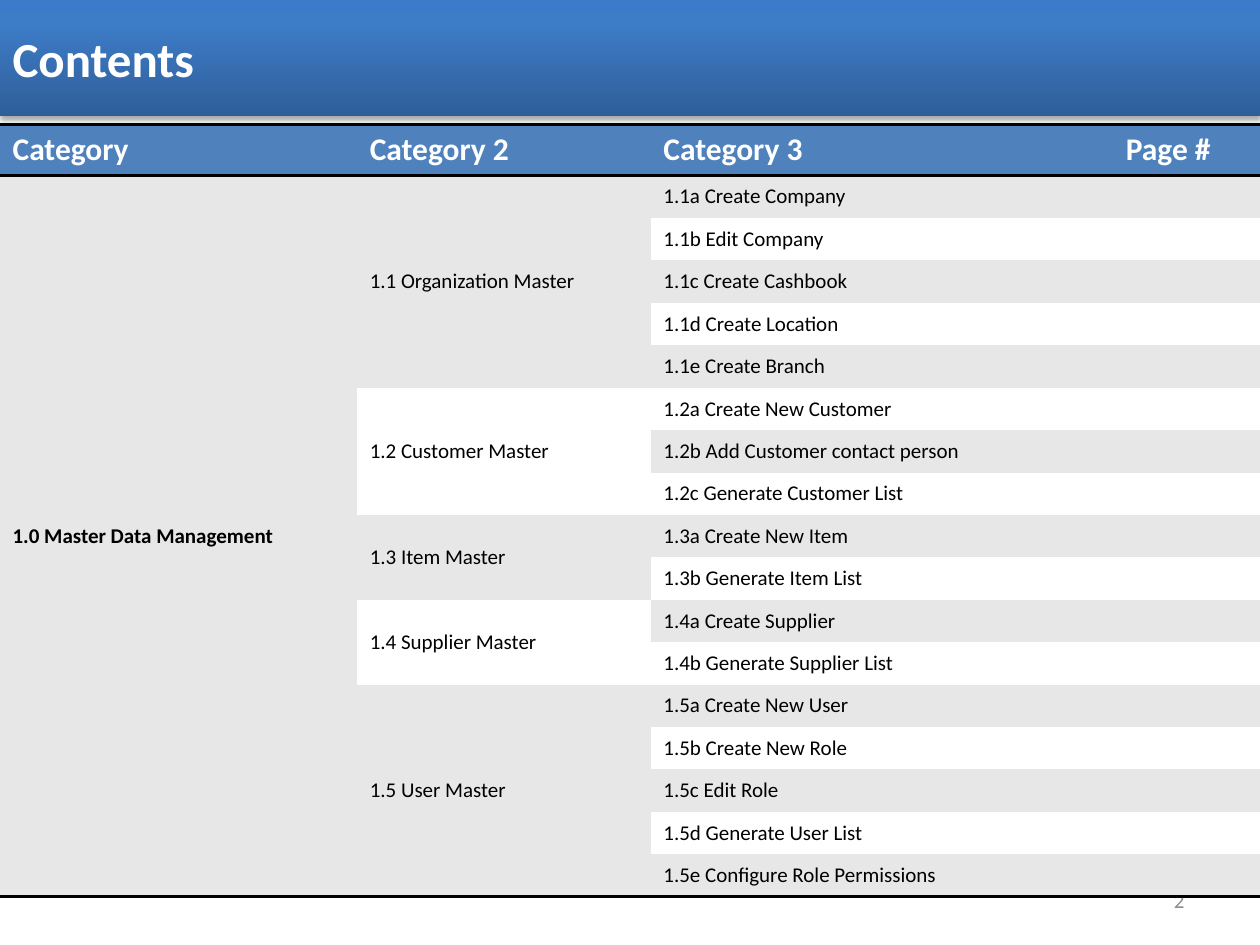
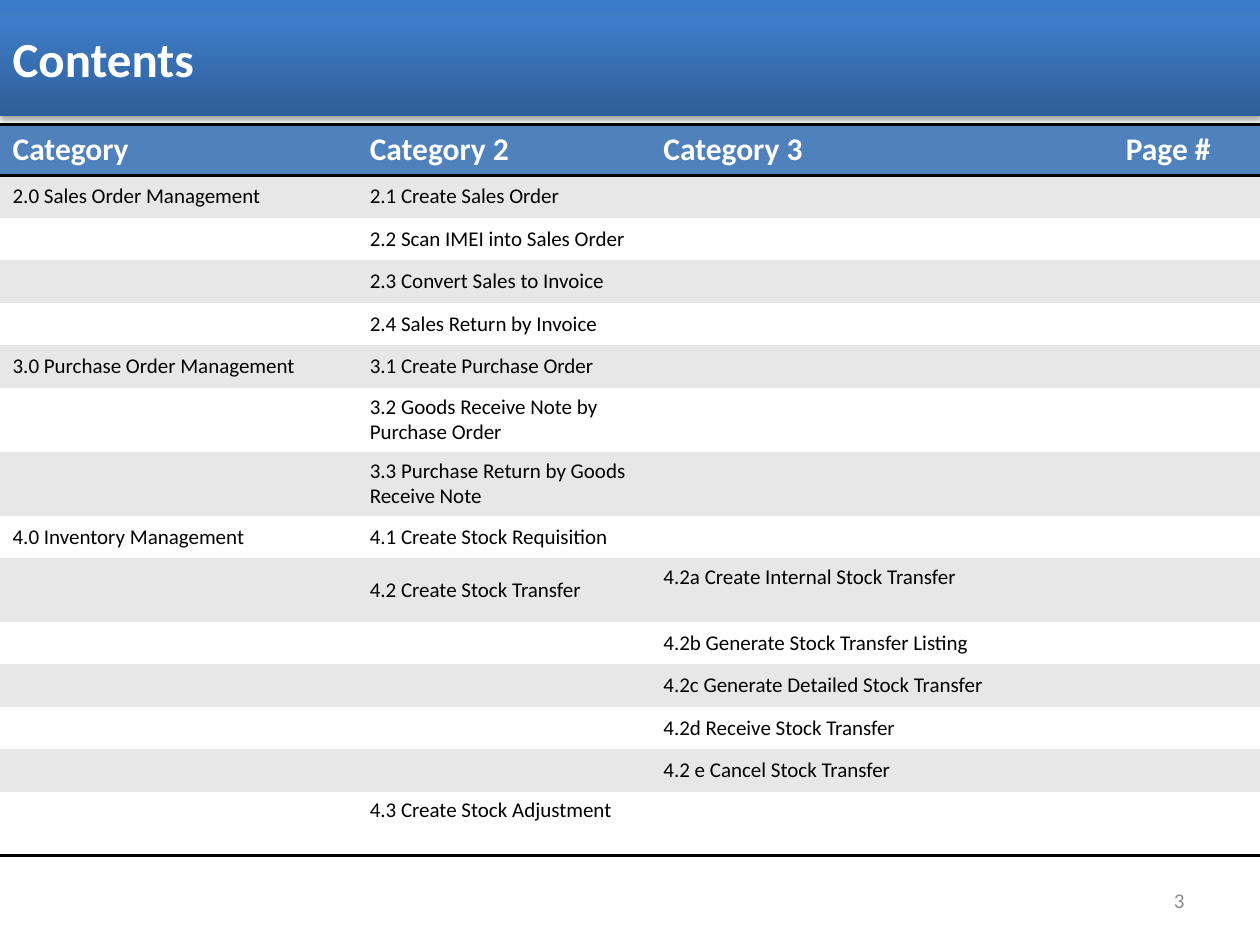
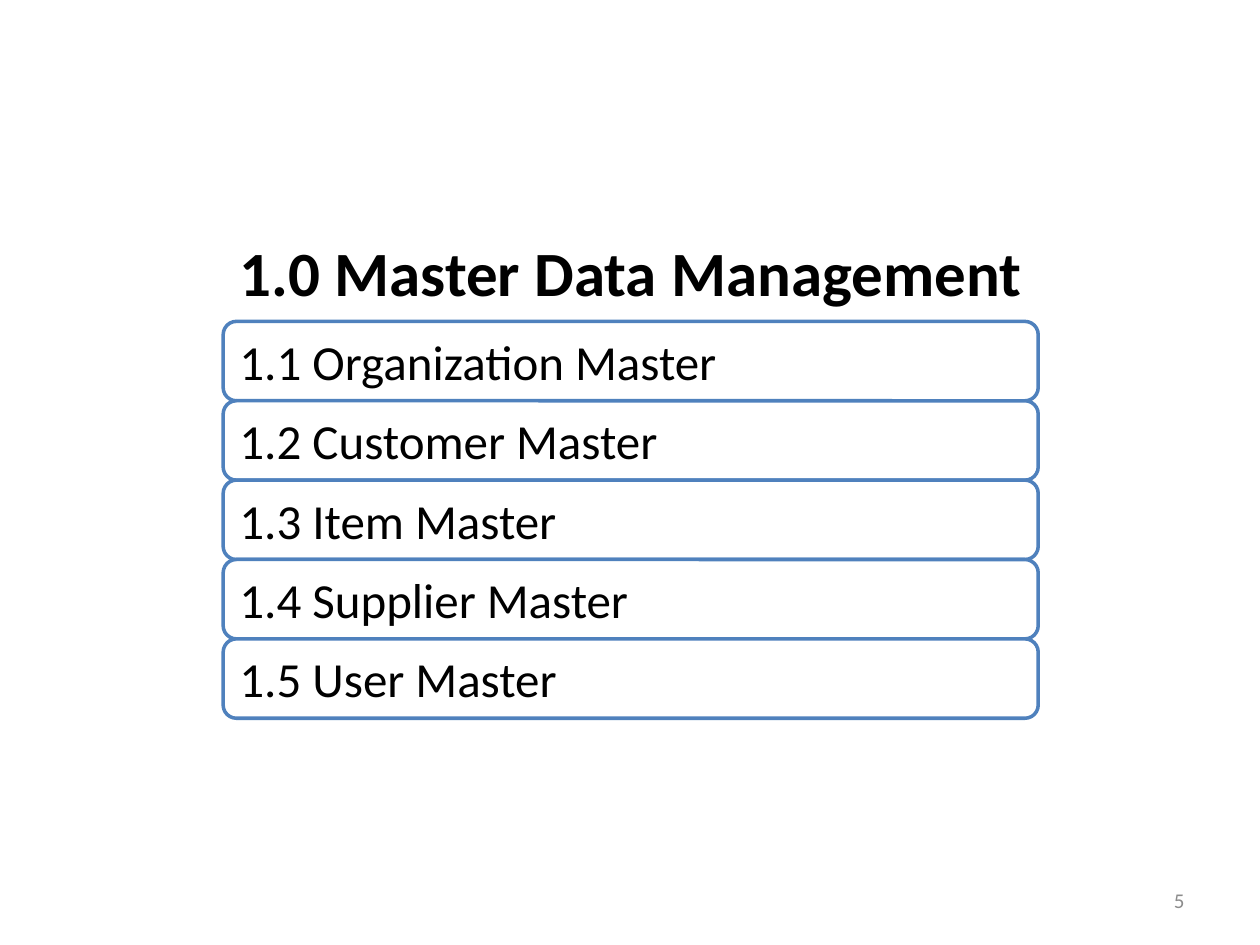
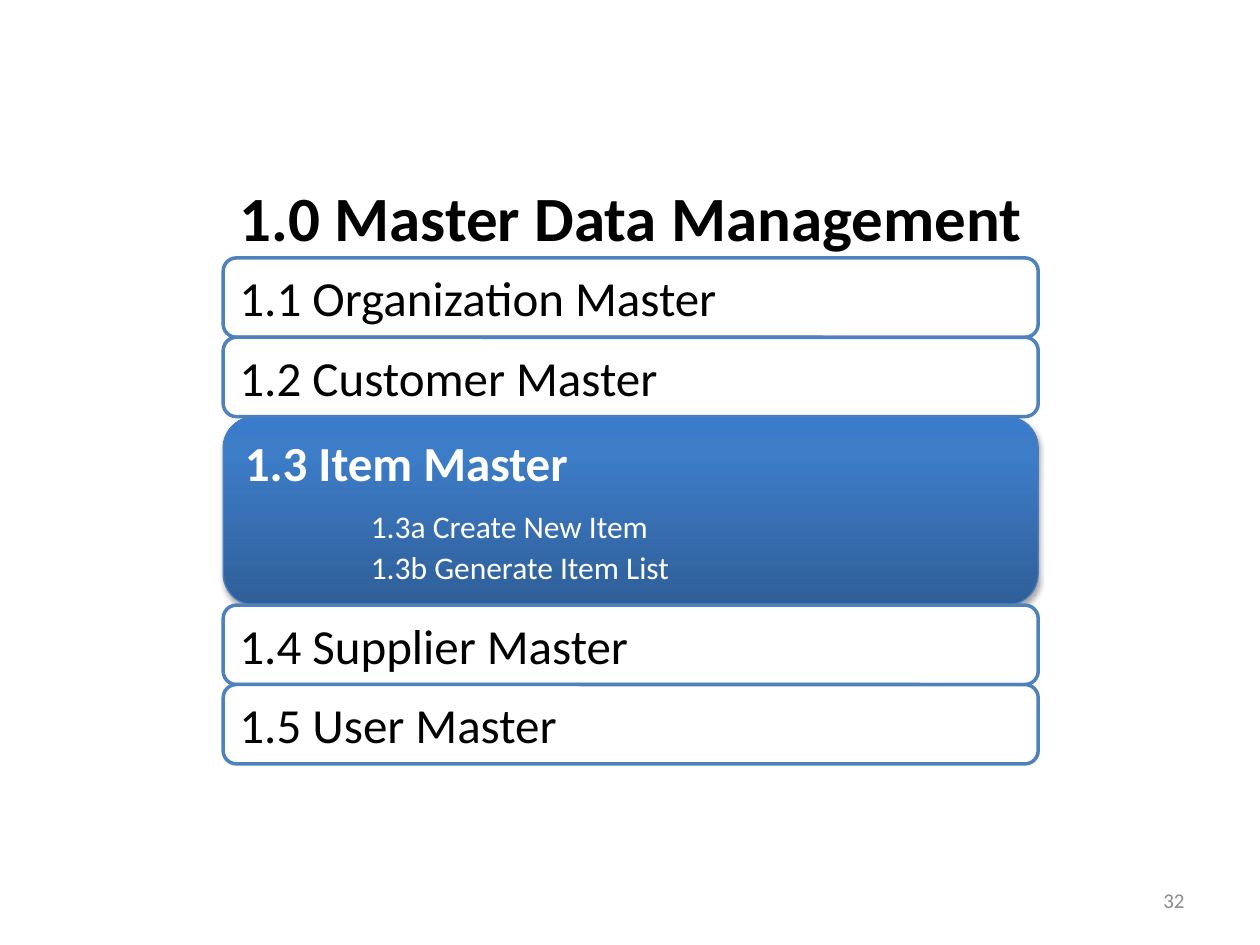
from lxml import etree
from pptx import Presentation
from pptx import util as u
from pptx.dml.color import RGBColor
from pptx.enum import shapes, text
from pptx.oxml import ns

# Shared look
FONT = "Calibri"
COLORS = {
    "white": "FFFFFF", "black": "000000", "header": "4F81BD", "band": "E7E7E7",
    "number": "8C8C8C", "edge": "4B7EBC",
}
GRADIENT = [(0, "2F5F99"), (80, "3D7CC7"), (100, "3A7CCB")]
MIDDLE, TOP = text.MSO_ANCHOR.MIDDLE, text.MSO_ANCHOR.TOP

# Contents tables: None continues the cell above
HEADINGS = ("Category", "Category 2", "Category 3", "Page #")
COLUMN_WIDTHS = (7.2, 5.92, 9.32, 2.96)
HEADER_HEIGHT, ROW_HEIGHT, TALL_HEIGHT = 1.03, 14.55 / 17, 1.29

SECTION = "1.0 Master Data Management"
MASTERS = {
    "1.1 Organization Master": [
        "1.1a Create Company", "1.1b Edit Company", "1.1c Create Cashbook",
        "1.1d Create Location", "1.1e Create Branch"],
    "1.2 Customer Master": [
        "1.2a Create New Customer", "1.2b Add Customer contact person",
        "1.2c Generate Customer List"],
    "1.3 Item Master": ["1.3a Create New Item", "1.3b Generate Item List"],
    "1.4 Supplier Master": ["1.4a Create Supplier", "1.4b Generate Supplier List"],
    "1.5 User Master": [
        "1.5a Create New User", "1.5b Create New Role", "1.5c Edit Role",
        "1.5d Generate User List", "1.5e Configure Role Permissions"],
}
MASTER_ROWS = [
    (None, None if i else master, item, "")
    for master, items in MASTERS.items() for i, item in enumerate(items)
]
MASTER_ROWS[0] = (SECTION,) + MASTER_ROWS[0][1:]

ORDER_ROWS = [
    ("2.0 Sales Order Management", "2.1 Create Sales Order", "", ""),
    ("", "2.2 Scan IMEI into Sales Order", "", ""),
    ("", "2.3 Convert Sales to Invoice", "", ""),
    ("", "2.4 Sales Return by Invoice", "", ""),
    ("3.0 Purchase Order Management", "3.1 Create Purchase Order", "", ""),
    ("", "3.2 Goods Receive Note by Purchase Order", "", ""),
    ("", "3.3 Purchase Return by Goods Receive Note", "", ""),
    ("4.0 Inventory Management", "4.1 Create Stock Requisition", "", ""),
    ("", "4.2 Create Stock Transfer", "4.2a Create Internal Stock Transfer", ""),
    ("", "", "4.2b Generate Stock Transfer Listing", ""),
    ("", "", "4.2c Generate Detailed Stock Transfer", ""),
    ("", "", "4.2d Receive Stock Transfer", ""),
    ("", "", "4.2 e Cancel Stock Transfer", ""),
    ("", "4.3 Create Stock Adjustment", "", ""),
]
CONTENTS = [
    {"number": 2, "rows": MASTER_ROWS, "tall": (), "top": (), "bold": (SECTION,)},
    {"number": 3, "rows": ORDER_ROWS, "tall": (6, 7, 9, 14),
     "top": ("4.2a Create Internal Stock Transfer", "4.3 Create Stock Adjustment"),
     "bold": ()},
]

# Section slides: stacked boxes, with at most one opened
BOX_LEFT, BOX_WIDTH, BOX_HEIGHT, OPEN_HEIGHT = 4.5, 16.43, 1.6, 3.8
SECTIONS = [
    {"number": 5, "title_top": 4.57, "boxes_top": 6.48, "open": None},
    {"number": 32, "title_top": 3.48, "boxes_top": 5.2, "open": "1.3 Item Master"},
]


def rgb(name):
    return RGBColor.from_string(COLORS[name])


def style(paragraph, size, color, bold=False, align=text.PP_ALIGN.LEFT):
    paragraph.alignment = align
    font = paragraph.font
    font.name, font.size, font.bold = FONT, u.Pt(size), bold
    font.color.rgb = rgb(color)


def add_element(parent, tag, **attributes):
    element = etree.SubElement(parent, ns.qn(tag))
    for name, value in attributes.items():
        element.set(name, str(value))
    return element


def add_glossy_fill(shape):
    """Blue vertical gradient with a soft shadow below."""
    properties = shape.element.spPr
    gradient = add_element(properties, "a:gradFill", rotWithShape=1)
    stops = add_element(gradient, "a:gsLst")
    for position, color in GRADIENT:
        stop = add_element(stops, "a:gs", pos=position * 1000)
        add_element(stop, "a:srgbClr", val=color)
    add_element(gradient, "a:lin", ang=16200000, scaled=0)
    effects = add_element(properties, "a:effectLst")
    shadow = add_element(effects, "a:outerShdw", blurRad=u.Pt(3.1), dist=u.Pt(1.8),
                         dir=5400000, rotWithShape=0)
    color = add_element(shadow, "a:srgbClr", val=COLORS["black"])
    add_element(color, "a:alpha", val=35000)


def add_slide(presentation, title, number, box, size, color, align, anchor):
    """Title-only slide with its title placed and its page number."""
    slide = presentation.slides.add_slide(presentation.slide_layouts[5])
    shape = slide.shapes.title
    shape.left, shape.top, shape.width, shape.height = (u.Cm(n) for n in box)
    frame = shape.text_frame
    frame.text = title
    frame.auto_size = text.MSO_AUTO_SIZE.NONE
    frame.vertical_anchor = anchor
    style(frame.paragraphs[0], size, color, True, align)

    footer = slide.shapes.add_textbox(u.Cm(18.2), u.Cm(17.65), u.Cm(5.93), u.Cm(1.01))
    frame = footer.text_frame
    frame.word_wrap = True
    frame.vertical_anchor = MIDDLE
    frame.text = str(number)
    style(frame.paragraphs[0], 12, "number", align=text.PP_ALIGN.RIGHT)
    return slide


def add_rules(cell, *tags):
    """Black 2 pt lines on the given cell sides, set before the fill."""
    properties = cell._tc.get_or_add_tcPr()
    for tag in tags:
        line = add_element(properties, tag, w=u.Pt(2))
        fill = add_element(line, "a:solidFill")
        add_element(fill, "a:srgbClr", val=COLORS["black"])


def fill_cell(cell, words, fill, size, color, bold, anchor):
    cell.text = words
    cell.vertical_anchor = anchor
    cell.fill.solid()
    cell.fill.fore_color.rgb = rgb(fill)
    paragraph = cell.text_frame.paragraphs[0]
    style(paragraph, size, color, bold)
    if not words:
        paragraph._p.get_or_add_endParaRPr().set("sz", str(size * 100))


def add_contents_table(slide, content):
    rows = content["rows"]
    heights = [HEADER_HEIGHT] + [
        TALL_HEIGHT if i in content["tall"] else ROW_HEIGHT
        for i in range(1, len(rows) + 1)]
    table = slide.shapes.add_table(
        len(heights), len(HEADINGS), 0, u.Cm(2.51),
        u.Cm(sum(COLUMN_WIDTHS)), u.Cm(sum(heights))).table
    table.first_row = table.horz_banding = False
    style_id = table._tbl.tblPr.find(ns.qn("a:tableStyleId"))
    style_id.text = "{2D5ABB26-0587-4C30-8999-92F81FD0307C}"
    for row, height in zip(table.rows, heights):
        row.height = u.Cm(height)

    for j, heading in enumerate(HEADINGS):
        table.columns[j].width = u.Cm(COLUMN_WIDTHS[j])
        add_rules(table.cell(0, j), "a:lnT", "a:lnB")
        fill_cell(table.cell(0, j), heading, "header", 18, "white", True, TOP)

        # Bands alternate with each new cell of the column
        starts = [i for i, row in enumerate(rows, 1) if row[j] is not None]
        ends = [i - 1 for i in starts[1:]] + [len(rows)]
        for band, (start, end) in enumerate(zip(starts, ends)):
            cell = table.cell(start, j)
            words = rows[start - 1][j]
            if end > start:
                cell.merge(table.cell(end, j))
            if end == len(rows):
                for edge in {start, end}:
                    add_rules(table.cell(edge, j), "a:lnB")
            fill_cell(cell, words, "white" if band % 2 else "band", 12, "black",
                      words in content["bold"],
                      TOP if words in content["top"] else MIDDLE)


def add_box(slide, master, top, opened):
    """Add one rounded box and return its height."""
    height = OPEN_HEIGHT if opened else BOX_HEIGHT
    box = slide.shapes.add_shape(
        shapes.MSO_SHAPE.ROUNDED_RECTANGLE,
        u.Cm(BOX_LEFT), u.Cm(top), u.Cm(BOX_WIDTH), u.Cm(height))
    if opened:
        add_glossy_fill(box)
    else:
        box.shadow.inherit = False
        box.fill.solid()
        box.fill.fore_color.rgb = rgb("white")
    box.line.color.rgb = rgb("edge" if opened else "header")
    box.line.width = u.Pt(0.75 if opened else 2)
    frame = box.text_frame
    frame.word_wrap = True
    frame.vertical_anchor = TOP
    frame.text = master
    style(frame.paragraphs[0], 28, "white" if opened else "black", opened)
    for i, item in enumerate(MASTERS[master] if opened else ()):
        paragraph = frame.add_paragraph()
        paragraph.text = item
        paragraph._p.get_or_add_pPr().set("marL", str(u.Cm(2.54)))
        paragraph.space_before = u.Pt(2 if i else 9)
        style(paragraph, 18, "white")
    return height


def main():
    presentation = Presentation()
    presentation.slide_width, presentation.slide_height = u.Cm(25.4), u.Cm(19.05)

    for content in CONTENTS:
        slide = add_slide(presentation, "Contents", content["number"],
                          (0, 0, 25.4, 2.33), 28, "white", text.PP_ALIGN.LEFT, MIDDLE)
        add_glossy_fill(slide.shapes.title)
        add_contents_table(slide, content)

    for section in SECTIONS:
        slide = add_slide(presentation, SECTION, section["number"],
                          (BOX_LEFT, section["title_top"], BOX_WIDTH, 1.8),
                          36, "black", text.PP_ALIGN.CENTER, TOP)
        slide.shapes.title.text_frame.word_wrap = False
        top = section["boxes_top"]
        for master in MASTERS:
            top += add_box(slide, master, top, master == section["open"])

    presentation.save("out.pptx")


if __name__ == "__main__":
    main()
